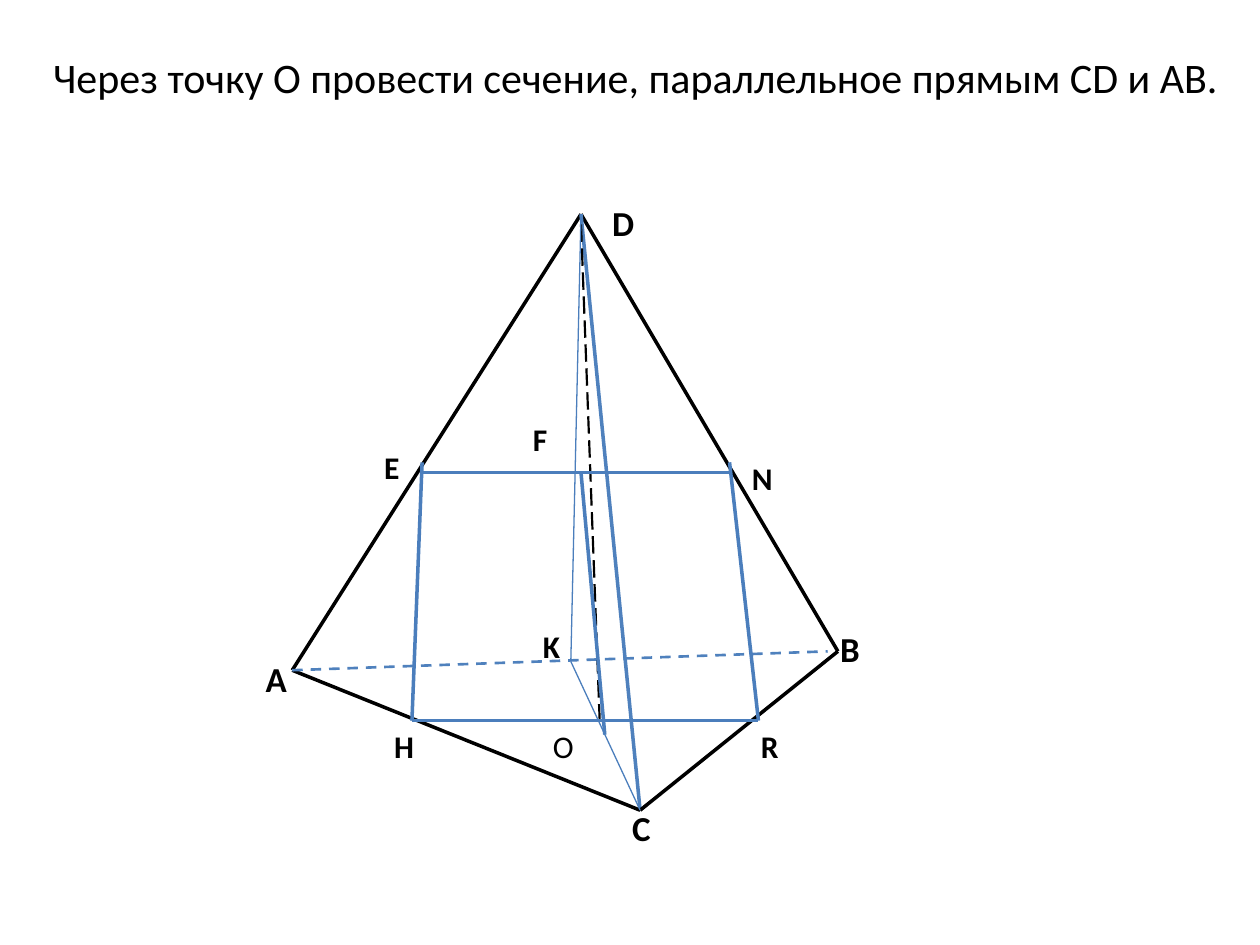
from pptx import Presentation
from pptx.util import Pt
from pptx.dml.color import RGBColor
from pptx.enum import dml, shapes, text
from pptx.oxml import ns
from lxml import etree

BLACK = RGBColor(0x00, 0x00, 0x00)
EDGE_BLUE = RGBColor(0x4F, 0x81, 0xBD)
SECTION_BLUE = RGBColor(0x4B, 0x7E, 0xBC)
DASH = dml.MSO_LINE.DASH
LONG_DASH = dml.MSO_LINE.LONG_DASH

A = (167, 383)
B = (478.8, 372.2)
C = (365.8, 463)
D = (332, 122.4)
K = (326.2, 378)
SECTION_TOP, SECTION_BOTTOM = 270, 411.8
E_X, N_X = 241.2, 416.9
F = (332, SECTION_TOP)
H = (235.4, SECTION_BOTTOM)
R = (433.4, SECTION_BOTTOM)

EDGES = [
    (D, B, BLACK, 2, None),
    (D, A, BLACK, 2, None),
    (D, C, EDGE_BLUE, 2, None),
    (A, C, BLACK, 2, None),
    (C, B, BLACK, 2, None),
    (A, (473, 372.2), EDGE_BLUE, 1.5, DASH),
    ((332, 128.2), (342.7, SECTION_BOTTOM), BLACK, 1.25, LONG_DASH),
]
SECTION_LINES = [
    (C, K, 0.75),
    (K, D, 0.75),
    ((345.6, 419.8), F, 2),
    ((E_X, SECTION_TOP), (N_X, SECTION_TOP), 2),
    (H, R, 2),
    ((E_X, 264.2), H, 2),
    ((N_X, 264.2), R, 2),
]
VERTEX_LABELS = [
    ("D", 342.7, 111.6, 27.4),
    ("A", 144.7, 372.2, 25.9),
    ("B", 473, 355, 31.7),
    ("C", 354.2, 457.2, 43.2),
]
SECTION_LABELS = [
    ("F", 297.4, 236.2, 33.8),
    ("E", 212.4, 252.7, 25.9),
    ("N", 422.6, 258.5, 25.9),
    ("H", 218.2, 411.8, 25.9),
    ("R", 427.7, 411.8, 25.9),
    ("K", 303.1, 355, 33.8),
]


def add_text(slide, wording, left, top, width, height, size, bold=False,
             align=text.PP_ALIGN.LEFT, anchor=text.MSO_ANCHOR.TOP):
    box = slide.shapes.add_textbox(Pt(left), Pt(top), Pt(width), Pt(height))
    frame = box.text_frame
    frame.word_wrap = True
    frame.vertical_anchor = anchor
    paragraph = frame.paragraphs[0]
    paragraph.alignment = align
    run = paragraph.add_run()
    run.text = wording
    run.font.name = "Calibri"
    run.font.size = Pt(size)
    run.font.bold = bold
    run.font.color.rgb = BLACK


def add_segment(slide, start, end, color, weight, dash=None):
    segment = slide.shapes.add_connector(
        shapes.MSO_CONNECTOR.STRAIGHT, *map(Pt, start + end))
    segment.line.color.rgb = color
    segment.line.width = Pt(weight)
    if dash is not None:
        segment.line.dash_style = dash
    etree.SubElement(segment._element.spPr, ns.qn("a:effectLst"))


def main():
    deck = Presentation()
    deck.slide_width, deck.slide_height = Pt(720), Pt(540)
    slide = deck.slides.add_slide(deck.slide_layouts[6])

    add_text(slide, "Через точку О провести сечение, параллельное прямым CD и AB.",
             20.2, 21.6, 686.2, 43.9, 24,
             align=text.PP_ALIGN.CENTER, anchor=text.MSO_ANCHOR.MIDDLE)
    for start, end, color, weight, dash in EDGES:
        add_segment(slide, start, end, color, weight, dash)
    for letter, left, top, width in VERTEX_LABELS:
        add_text(slide, letter, left, top, width, 31.5, 20, bold=True)
    add_text(slide, "O", 308.9, 411.8, 43.2, 29, 18)
    for start, end, weight in SECTION_LINES:
        add_segment(slide, start, end, SECTION_BLUE, weight)
    for letter, left, top, width in SECTION_LABELS:
        add_text(slide, letter, left, top, width, 29, 18, bold=True)

    deck.save("out.pptx")


if __name__ == "__main__":
    main()
